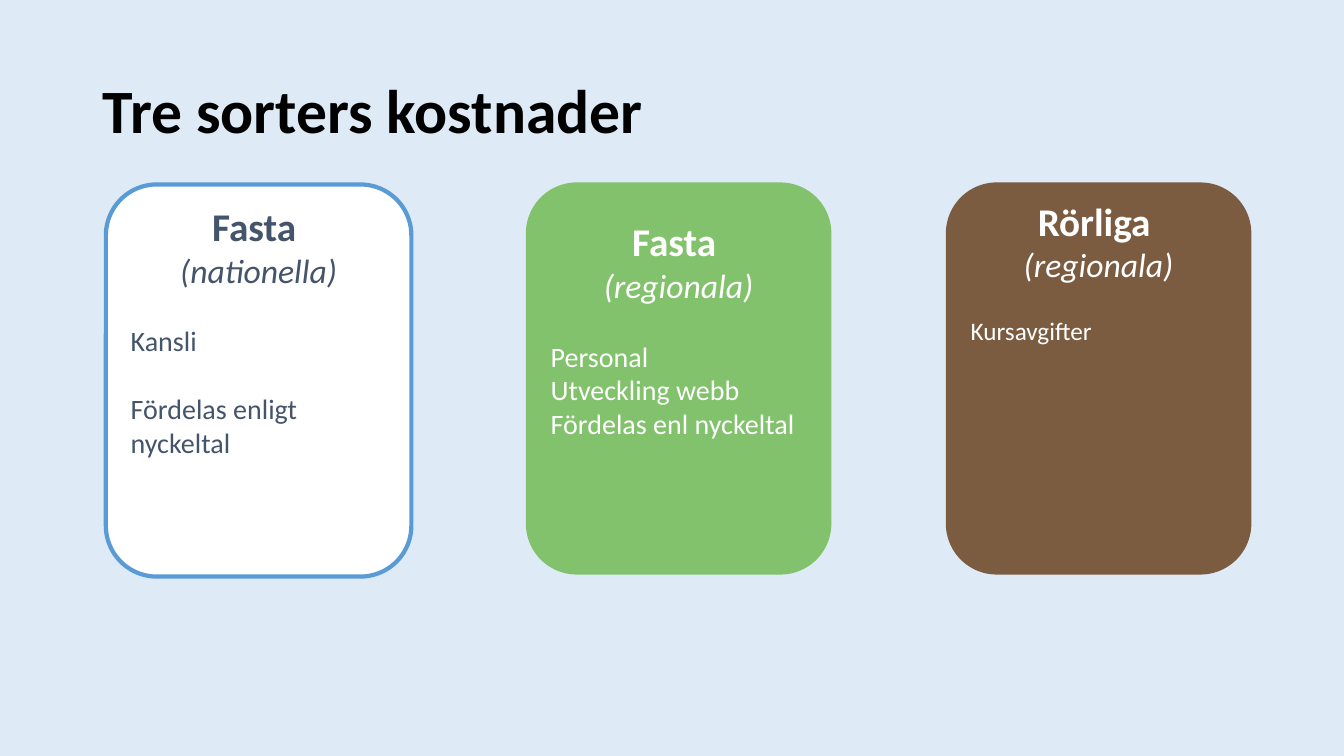
import pptx
import pptx.dml.color
import pptx.enum.shapes
import pptx.enum.text
import pptx.util

COLORS = {"background": "DEEBF7", "title": "000000", "white": "FFFFFF",
          "slate": "44546A", "blue": "5B9BD5", "green": "83C26D", "brown": "7B5C41"}
FONT = "Calibri"
SLIDE_WIDTH, SLIDE_HEIGHT = 13.33, 7.5

# Boxes are left, top, width, height in percent of the slide
TITLE_BOX = (6.9, 5.33, 86.27, 19.33)
CARD_LEFT, CARD_PITCH = 7.88, 31.25
CARD_WIDTH, CARD_HEIGHT = 22.73, 51.87

HEADING = {"size": 28, "bold": True}
SCOPE = {"size": 24, "italic": True}

# Each item is its text and the gap above it in points
CARDS = [
    {"heading": "Fasta ", "scope": "(nationella)", "fill": "white", "line": "blue",
     "text": "slate", "size": 20, "top": 24.4, "inset": 0.03,
     "items": [("Kansli", 24.4), ("Fördelas enligt nyckeltal", 24.4)]},
    {"heading": "Fasta ", "scope": "(regionala)", "fill": "green", "line": None,
     "text": "white", "size": 20, "top": 24.13, "inset": 0.2,
     "items": [("Personal", 24.4), ("Utveckling webb", 0), ("Fördelas enl nyckeltal", 0)]},
    {"heading": "Rörliga ", "scope": "(regionala)", "fill": "brown", "line": None,
     "text": "white", "size": 18, "top": 24.13, "inset": 0,
     "items": [("Kursavgifter", 22)]},
]


def color(name):
    return pptx.dml.color.RGBColor.from_string(COLORS[name])


def to_slide(box):
    """Turn a box in percent of the slide into lengths."""
    sides = (SLIDE_WIDTH, SLIDE_HEIGHT) * 2
    return [pptx.util.Inches(share * side / 100) for share, side in zip(box, sides)]


def write_line(paragraph, text, color_name, font_format, paragraph_format):
    run = paragraph.add_run()
    run.text = text
    run.font.name = FONT
    run.font.color.rgb = color(color_name)
    for name, value in font_format.items():
        setattr(run.font, name, pptx.util.Pt(value) if name == "size" else value)
    for name, value in paragraph_format.items():
        setattr(paragraph, name, value)


def add_title(slide, box, text):
    shape = slide.shapes.add_textbox(*to_slide(box))
    shape.fill.solid()
    shape.fill.fore_color.rgb = color("background")
    frame = shape.text_frame
    frame.word_wrap = True
    frame.vertical_anchor = pptx.enum.text.MSO_ANCHOR.MIDDLE
    write_line(frame.paragraphs[0], text, "title",
               {"size": 44, "bold": True}, {"line_spacing": 0.9})


def add_card(slide, box, card):
    shape = slide.shapes.add_shape(
        pptx.enum.shapes.MSO_SHAPE.FLOWCHART_ALTERNATE_PROCESS, *to_slide(box))
    shape.shadow.inherit = False
    shape.fill.solid()
    shape.fill.fore_color.rgb = color(card["fill"])
    if card["line"]:
        shape.line.color.rgb = color(card["line"])
        shape.line.width = pptx.util.Pt(3)
    else:
        shape.line.fill.background()

    frame = shape.text_frame
    frame.word_wrap = True
    frame.vertical_anchor = pptx.enum.text.MSO_ANCHOR.TOP
    frame.margin_top = pptx.util.Inches(card["inset"])

    # Centred heading and scope, then left-aligned items
    align = pptx.enum.text.PP_ALIGN
    centred = {"alignment": align.CENTER}
    lines = [(card["heading"], HEADING, centred), (card["scope"], SCOPE, centred)]
    lines += [(text, {"size": card["size"]},
               {"alignment": align.LEFT, "space_before": pptx.util.Pt(gap)})
              for text, gap in card["items"]]
    for index, (text, font_format, paragraph_format) in enumerate(lines):
        paragraph = frame.add_paragraph() if index else frame.paragraphs[0]
        write_line(paragraph, text, card["text"], font_format, paragraph_format)


def add_cost_slide(presentation):
    slide = presentation.slides.add_slide(presentation.slide_layouts[6])
    slide.background.fill.solid()
    slide.background.fill.fore_color.rgb = color("background")
    add_title(slide, TITLE_BOX, "Tre sorters kostnader")
    for column, card in enumerate(CARDS):
        left = CARD_LEFT + column * CARD_PITCH
        add_card(slide, (left, card["top"], CARD_WIDTH, CARD_HEIGHT), card)


def main():
    presentation = pptx.Presentation()
    presentation.slide_width = pptx.util.Inches(SLIDE_WIDTH)
    presentation.slide_height = pptx.util.Inches(SLIDE_HEIGHT)
    add_cost_slide(presentation)
    presentation.save("out.pptx")


if __name__ == "__main__":
    main()
